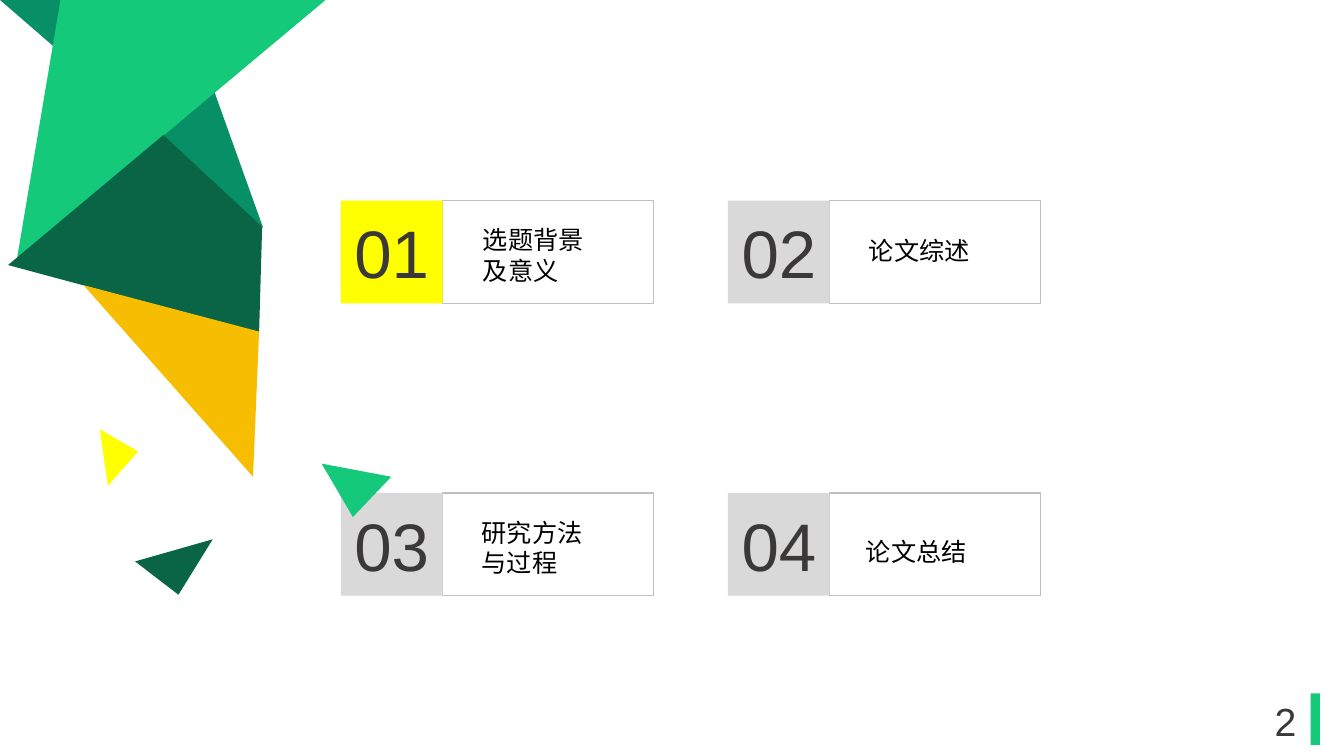
from dataclasses import dataclass

from pptx import Presentation
from pptx.dml.color import RGBColor as Rgb
from pptx.enum.shapes import MSO_SHAPE as Preset
from pptx.enum.text import MSO_ANCHOR as Anchor, PP_ALIGN as Align
from pptx.util import Inches, Pt


@dataclass(frozen=True)
class Theme:
    """Colours, font and type sizes of the slide."""
    green: str = "14C97A"
    teal: str = "079066"
    forest: str = "0A6546"
    gold: str = "F7BD01"
    yellow: str = "FFFF00"
    grey: str = "D9D9D9"
    border: str = "BFBFBF"
    ink: str = "3B3838"
    black: str = "000000"
    font: str = "Arial"
    number_size: int = 48
    label_size: int = 18
    page_size: int = 28


THEME = Theme()

BACK_SHARDS = [
    (THEME.teal, [(1.8, 0), (2.61, 2.26), (0, 0)]),
    (THEME.green, [(3.23, 0), (0.6, 0), (0.17, 2.56)]),
    (THEME.forest, [(2.6, 2.25), (1.62, 1.34), (0.08, 2.63), (2.57, 3.3)]),
    (THEME.gold, [(2.57, 3.29), (2.51, 4.73), (0.83, 2.83)]),
    (THEME.forest, [(1.34, 5.57), (1.77, 5.9), (2.11, 5.35)]),
    (THEME.yellow, [(0.99, 4.26), (1.07, 4.82), (1.37, 4.48)]),
]
FRONT_SHARD = (THEME.green, [(3.88, 4.73), (3.19, 4.6), (3.5, 5.13)])

CHAPTERS = [
    (["选题背景", "及意义"], 4.69, 2.18),
    (["论文综述"], 8.52, 2.29),
    (["研究方法", "与过程"], 4.68, 5.08),
    (["论文总结"], 8.49, 5.27),
]
COLUMNS = (3.38, 7.22)
ROWS = (1.99, 4.89)
TILE_WIDTH, FRAME_WIDTH, CHAPTER_HEIGHT = 1.01, 2.09, 1.02


def apply_format(target, values):
    """Set every attribute named in values on target."""
    for name, value in values.items():
        setattr(target, name, value)


def paint(shape, fill=None, line=None):
    """Give a shape its fill and outline without a shadow."""
    shape.shadow.inherit = False
    if fill:
        shape.fill.solid()
        shape.fill.fore_color.rgb = Rgb.from_string(fill)
    else:
        shape.fill.background()
    if line:
        shape.line.color.rgb = Rgb.from_string(line)
        shape.line.width = Pt(1)
    else:
        shape.line.fill.background()


def write(shape, lines, size, color, align, anchor):
    """Write lines as formatted paragraphs into a shape."""
    frame = shape.text_frame
    apply_format(frame, {"word_wrap": True, "vertical_anchor": anchor})
    frame.text = "\n".join(lines)
    for paragraph in frame.paragraphs:
        paragraph.alignment = align
        apply_format(paragraph.font, {"name": THEME.font, "size": Pt(size)})
        paragraph.font.color.rgb = Rgb.from_string(color)


def add_shard(slide, color, corners):
    """Draw one filled polygon through its corners."""
    points = [(Inches(x), Inches(y)) for x, y in corners]
    outline = slide.shapes.build_freeform(*points[0])
    outline.add_line_segments(points[1:], close=True)
    paint(outline.convert_to_shape(), color)


def add_box(slide, left, top, width, height, fill=None, line=None):
    """Draw one plain rectangle."""
    box = slide.shapes.add_shape(
        Preset.RECTANGLE, Inches(left), Inches(top), Inches(width), Inches(height))
    paint(box, fill, line)
    return box


def add_text(slide, place, lines, size, color, align, anchor):
    """Place a free text box."""
    text_box = slide.shapes.add_textbox(*map(Inches, place))
    write(text_box, lines, size, color, align, anchor)


def add_chapter(slide, index, lines, label_left, label_top):
    """Draw one agenda entry with number tile, frame and label."""
    row, column = divmod(index, len(COLUMNS))
    left, top = COLUMNS[column], ROWS[row]
    add_box(slide, left + TILE_WIDTH, top, FRAME_WIDTH, CHAPTER_HEIGHT,
            line=THEME.border)
    tile = add_box(slide, left, top, TILE_WIDTH, CHAPTER_HEIGHT,
                   fill=THEME.grey if index else THEME.yellow)
    write(tile, [f"{index + 1:02}"], THEME.number_size, THEME.ink,
          Align.CENTER, Anchor.MIDDLE)
    add_text(slide, (label_left, label_top, 1.51, 0.1 + 0.3 * len(lines)), lines,
             THEME.label_size, THEME.black, Align.LEFT, Anchor.TOP)


def main():
    """Build the agenda slide and save it."""
    deck = Presentation()
    apply_format(deck, {"slide_width": Inches(13.33), "slide_height": Inches(7.5)})
    slide = deck.slides.add_slide(deck.slide_layouts[6])
    add_box(slide, 13, 6.88, 0.09, 0.51, fill=THEME.green)
    for color, corners in BACK_SHARDS:
        add_shard(slide, color, corners)
    for index, chapter in enumerate(CHAPTERS):
        add_chapter(slide, index, *chapter)
    add_shard(slide, *FRONT_SHARD)
    add_text(slide, (12.37, 6.95, 0.76, 0.4), ["2"], THEME.page_size, THEME.ink,
             Align.CENTER, Anchor.MIDDLE)
    deck.save("out.pptx")


if __name__ == "__main__":
    main()
